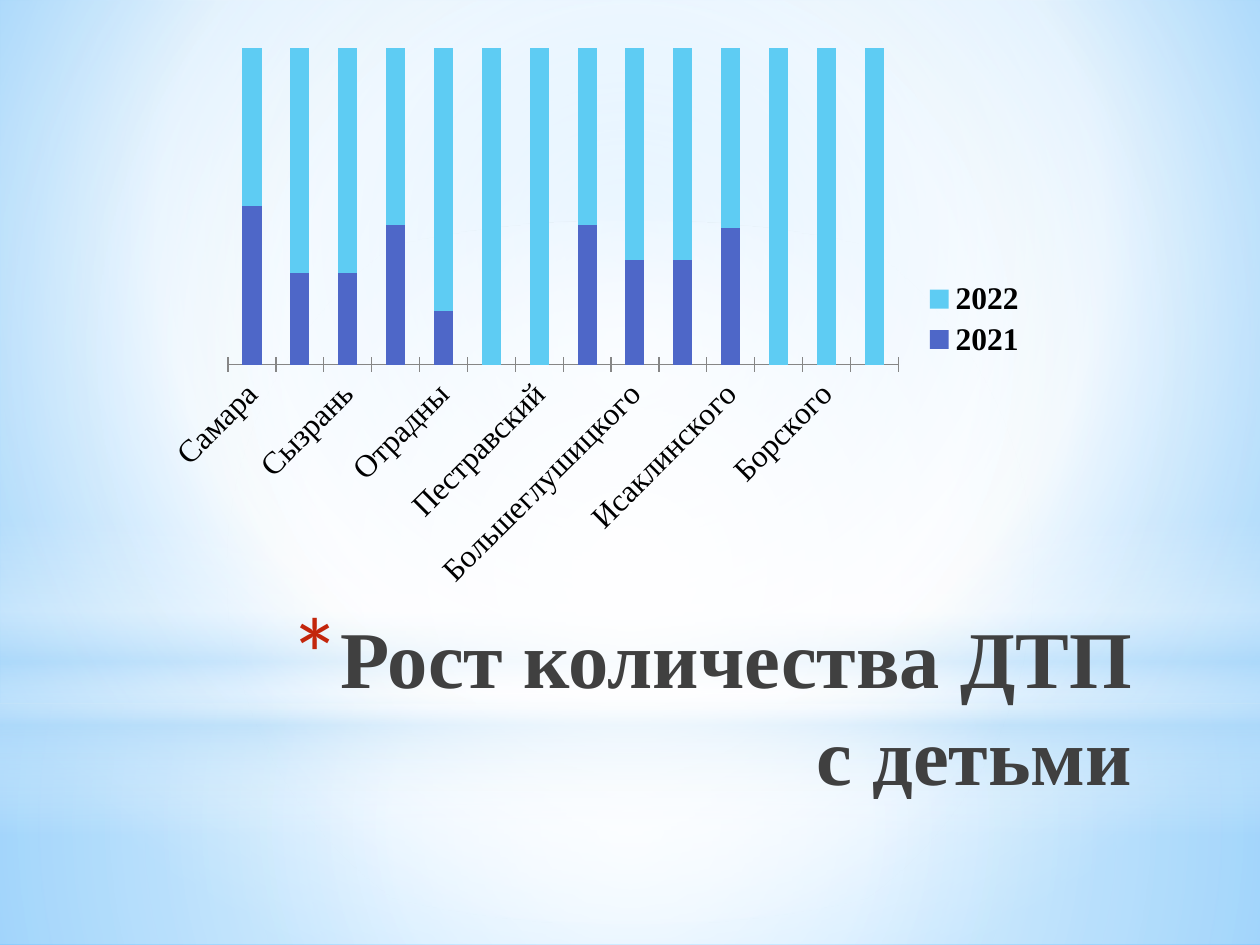
from lxml.etree import SubElement
from pptx import Presentation
from pptx.chart.data import CategoryChartData
from pptx.dml.color import RGBColor
from pptx.enum.chart import XL_CHART_TYPE, XL_LEGEND_POSITION, XL_TICK_MARK
from pptx.enum.shapes import MSO_SHAPE
from pptx.enum.text import MSO_ANCHOR, MSO_AUTO_SIZE, PP_ALIGN
from pptx.oxml.ns import qn
from pptx.util import Pt

FONT = "Times New Roman"
COLORS = {
    "white": "FFFFFF", "haze": "B4DCFA", "sky": "9ED5FF", "deep_sky": "5BB9FF",
    "title": "404040", "bullet": "C3260C", "text": "000000", "axis": "868686",
    "2021": "4E67C8", "2022": "5ECCF3",
}
CENTRE = (50, 50, 50, 50)

# Accidents with children: share of each year, in percent
SHARES = {
    "Самара": (50, 50), "Чапаевск": (29, 71), "Сызрань": (29, 71),
    "Новокуйбышевск": (44, 56), "Отрадны": (17, 83), "Камышлинский": (0, 100),
    "Пестравский": (0, 100), "Безенчукского": (44, 56),
    "Большеглушицкого": (33, 67), "Похвистневского": (33, 67),
    "Исаклинского": (43, 57), "Кошкинского": (0, 100),
    "Борского": (0, 100), "Шигонского": (0, 100),
}


def rgb(color):
    return RGBColor.from_string(COLORS[color])


def child(parent, tag, **attributes):
    return SubElement(parent, qn(tag), {k: str(v) for k, v in attributes.items()})


def set_gradient(properties, stops, focus=None):
    """Swap a solid fill for (position, colour, opacity) stops: round with a focus, else downward."""
    solid = properties.find(qn("a:solidFill"))
    gradient = child(properties, "a:gradFill", rotWithShape=1)
    properties.replace(solid, gradient)
    stop_list = child(gradient, "a:gsLst")
    for position, color, opacity in stops:
        stop = child(stop_list, "a:gs", pos=position * 1000)
        tint = child(stop, "a:srgbClr", val=COLORS[color])
        if opacity < 100:
            child(tint, "a:alpha", val=opacity * 1000)
    if focus:
        circle = child(gradient, "a:path", path="circle")
        child(circle, "a:fillToRect", **{s: v * 1000 for s, v in zip("ltrb", focus)})
    else:
        child(gradient, "a:lin", ang=90 * 60000, scaled=0)


class SlideBuilder:
    def __init__(self, slide):
        self.slide = slide

    def background(self, stops, focus):
        fill = self.slide.background.fill
        fill.solid()
        fill.fore_color.rgb = rgb("white")
        set_gradient(self.slide.element.find(".//" + qn("p:bgPr")), stops, focus)

    def glow(self, preset, top, height, stops, focus=None):
        """Add a full-width translucent layer."""
        layer = self.slide.shapes.add_shape(preset, 0, Pt(top), Pt(720), Pt(height))
        layer.shadow.inherit = False
        layer.line.fill.background()
        layer.fill.solid()
        layer.fill.fore_color.rgb = rgb("white")
        set_gradient(layer.element.spPr, stops, focus)

    def title(self, text, left, top, width, height):
        heading = self.slide.shapes.title
        self.slide.shapes.element.append(heading.element)  # in front of the glows
        heading.left, heading.top = Pt(left), Pt(top)
        heading.width, heading.height = Pt(width), Pt(height)
        frame = heading.text_frame
        frame.word_wrap = True
        frame.auto_size = MSO_AUTO_SIZE.NONE
        frame.vertical_anchor = MSO_ANCHOR.TOP
        paragraph = frame.paragraphs[0]
        paragraph.alignment = PP_ALIGN.RIGHT
        run = paragraph.add_run()
        run.text = text
        run.font.name, run.font.size, run.font.bold = FONT, Pt(46), True
        run.font.color.rgb = rgb("title")
        properties = paragraph._p.get_or_add_pPr()
        properties.set("marL", str(Pt(25)))
        properties.set("indent", str(-Pt(25)))
        child(child(properties, "a:buClr"), "a:srgbClr", val=COLORS["bullet"])
        child(properties, "a:buSzPct", val=128000)
        child(properties, "a:buFont", typeface="+mj-lt")
        child(properties, "a:buChar", char="*")

    def stacked_chart(self, years, shares, left, top, width, height):
        data = CategoryChartData()
        data.categories = list(shares)
        for year, values in zip(years, zip(*shares.values())):
            data.add_series(year, values)
        chart = self.slide.shapes.add_chart(
            XL_CHART_TYPE.COLUMN_STACKED_100, Pt(left), Pt(top), Pt(width), Pt(height), data
        ).chart
        chart.has_title = False
        chart.font.name, chart.font.size = FONT, Pt(18)
        chart.font.color.rgb = rgb("text")

        plot = chart.plots[0]
        plot.vary_by_categories = False
        plot.overlap, plot.gap_width = 100, 150
        for series in plot.series:
            series.format.fill.solid()
            series.format.fill.fore_color.rgb = rgb(series.name)

        chart.value_axis.visible = False
        chart.value_axis.has_major_gridlines = False
        districts = chart.category_axis
        districts.major_tick_mark = XL_TICK_MARK.CROSS
        districts.format.line.color.rgb = rgb("axis")
        districts.tick_labels.font.size = Pt(18)
        axis = districts._element
        axis.find(qn("c:txPr")).find(qn("a:bodyPr")).set("rot", str(-45 * 60000))
        skip = child(axis, "c:tickLblSkip", val=2)
        axis.find(qn("c:noMultiLvlLbl")).addprevious(skip)

        chart.has_legend = True
        chart.legend.position = XL_LEGEND_POSITION.RIGHT
        chart.legend.include_in_layout = False
        chart.legend.font.name, chart.legend.font.size = FONT, Pt(18)
        chart.legend.font.bold = True
        self.place_plot(chart, x=0.08, y=0.02, w=0.76, h=0.56)

    @staticmethod
    def place_plot(chart, **fractions):
        """Fix the inner plot area as fractions of the chart."""
        area = chart._chartSpace.find(".//" + qn("c:plotArea"))
        layout = area.find(qn("c:layout"))
        if layout is None:
            layout = child(area, "c:layout")
            area.insert(0, layout)
        manual = child(layout, "c:manualLayout")
        child(manual, "c:layoutTarget", val="inner")
        for side in "xy":
            child(manual, f"c:{side}Mode", val="edge")
        for side, fraction in fractions.items():
            child(manual, f"c:{side}", val=fraction)


def main():
    deck = Presentation()
    deck.slide_width, deck.slide_height = Pt(720), Pt(540)
    builder = SlideBuilder(deck.slides.add_slide(deck.slide_layouts[5]))

    builder.background(
        [(0, "sky", 100), (60, "white", 100), (100, "deep_sky", 100)], (20, 10, 20, 60))
    horizon = 402
    builder.glow(MSO_SHAPE.RECTANGLE, horizon, 540 - horizon,
                 [(0, "white", 91), (37, "white", 76), (100, "haze", 79)], CENTRE)
    builder.glow(MSO_SHAPE.RECTANGLE, 0, horizon,
                 [(0, "white", 89), (48, "white", 62), (100, "haze", 79)], CENTRE)
    builder.glow(MSO_SHAPE.RECTANGLE, 297, 180,
                 [(0, "white", 0), (29, "white", 30), (45, "haze", 40),
                  (55, "white", 26), (65, "haze", 60), (100, "white", 0)])
    builder.glow(MSO_SHAPE.OVAL, 126, horizon,
                 [(0, "white", 100), (56, "white", 0)], CENTRE)

    builder.title("Рост количества ДТП с детьми", 141, 344, 513, 90)
    builder.stacked_chart(("2021", "2022"), SHARES, 90, 21, 504, 323)
    deck.save("out.pptx")


if __name__ == "__main__":
    main()
